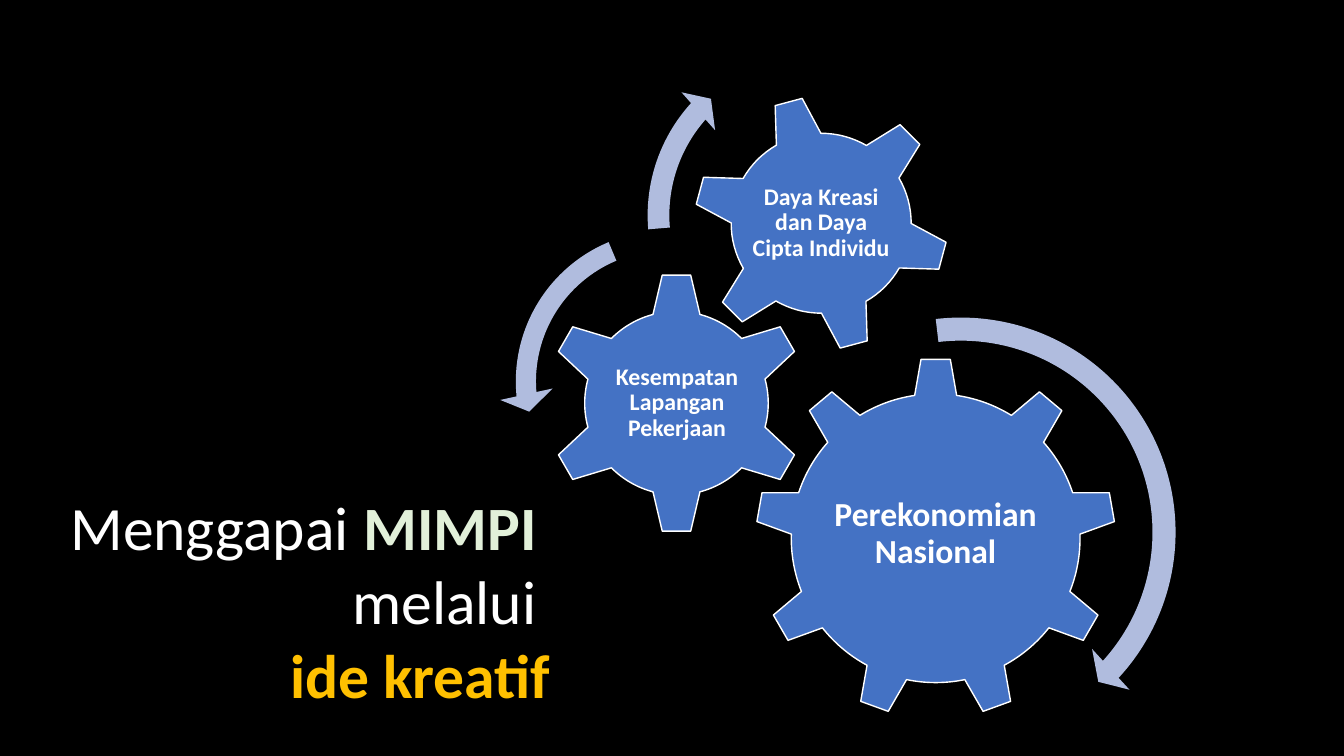
import pptx
import pptx.util
import pptx.dml.color
import pptx.enum.shapes
import pptx.enum.text

PX = 9144
FONT = "Calibri"
COLORS = {
    "back": "000000",
    "gear": "4472C4",
    "arrow": "B0BCDE",
    "white": "FFFFFF",
    "dream": "E2F0D9",
    "gold": "FFC000",
}
KIND = pptx.enum.shapes.MSO_SHAPE
ALIGN = pptx.enum.text.PP_ALIGN
ANCHOR = pptx.enum.text.MSO_ANCHOR
FIT = pptx.enum.text.MSO_AUTO_SIZE


class Board:
    def __init__(self, deck):
        self.slide = deck.slides.add_slide(deck.slide_layouts[6])
        self.paint(self.slide.background.fill, "back")

    def paint(self, fill, color):
        fill.solid()
        fill.fore_color.rgb = self.tint(color)

    def tint(self, color):
        return pptx.dml.color.RGBColor.from_string(COLORS[color])

    def shape(self, kind, box, color):
        item = self.slide.shapes.add_shape(kind, *[n * PX for n in box])
        item.shadow.inherit = False
        self.paint(item.fill, color)
        return item

    def gear(self, kind, box, turn=0):
        item = self.shape(kind, box, "gear")
        item.rotation = turn
        item.line.color.rgb = self.tint("white")
        item.line.width = pptx.util.Pt(1)

    def arrow(self, kind, box, bends):
        item = self.shape(kind, box, "arrow")
        item.line.fill.background()
        for spot, bend in enumerate(bends):
            item.adjustments[spot] = bend

    def frame(self, box):
        item = self.slide.shapes.add_textbox(*[n * PX for n in box])
        return item.text_frame

    def run(self, para, text, size, color, bold):
        run = para.add_run()
        run.text = text
        run.font.name = FONT
        run.font.size = pptx.util.Pt(size)
        run.font.bold = bold
        run.font.color.rgb = self.tint(color)

    def label(self, box, text, size, inset):
        frame = self.frame(box)
        frame.word_wrap = True
        frame.vertical_anchor = ANCHOR.MIDDLE
        frame.margin_left = frame.margin_right = inset * PX
        frame.margin_top = frame.margin_bottom = inset * PX
        para = frame.paragraphs[0]
        para.alignment = ALIGN.CENTER
        para.line_spacing = 0.9
        self.run(para, text, size, "white", True)

    def title(self, box, lines):
        frame = self.frame(box)
        frame.word_wrap = False
        frame.auto_size = FIT.SHAPE_TO_FIT_TEXT
        for spot, line in enumerate(lines):
            para = frame.add_paragraph() if spot else frame.paragraphs[0]
            para.alignment = ALIGN.RIGHT
            for text, color, bold in line:
                self.run(para, text, 44, color, bold)


def main():
    deck = pptx.Presentation()
    deck.slide_width = 1333 * PX
    deck.slide_height = 750 * PX
    board = Board(deck)

    board.gear(KIND.GEAR_9, (749, 355, 358, 358))
    board.label((821, 438, 214, 184), "Perekonomian Nasional", 24, 3)
    board.gear(KIND.GEAR_6, (541, 270, 260, 260))
    board.label((607, 336, 129, 128), "Kesempatan Lapangan Pekerjaan", 17, 2)
    board.gear(KIND.GEAR_6, (687, 94, 255, 255), 345)
    board.label((743, 150, 143, 143), "Daya Kreasi dan Daya Cipta Individu", 17, 2)

    board.arrow(KIND.CIRCULAR_ARROW, (724, 299, 458, 458),
                (0.05, 2.99, 25.47, 157.97, 0.06))
    board.arrow(KIND.LEFT_CIRCULAR_ARROW, (495, 212, 333, 333),
                (0.06, 4.3, 104.89, 148.38, 0.08))
    board.arrow(KIND.CIRCULAR_ARROW, (628, 34, 359, 359),
                (0.06, 3.94, 133.14, 105.08, 0.07))

    board.title((55, 480, 501, 232), [
        [("Menggapai ", "white", False), ("MIMPI ", "dream", True)],
        [("melalui ", "white", False)],
        [("ide kreatif", "gold", True)],
    ])
    deck.save("out.pptx")


if __name__ == "__main__":
    main()
